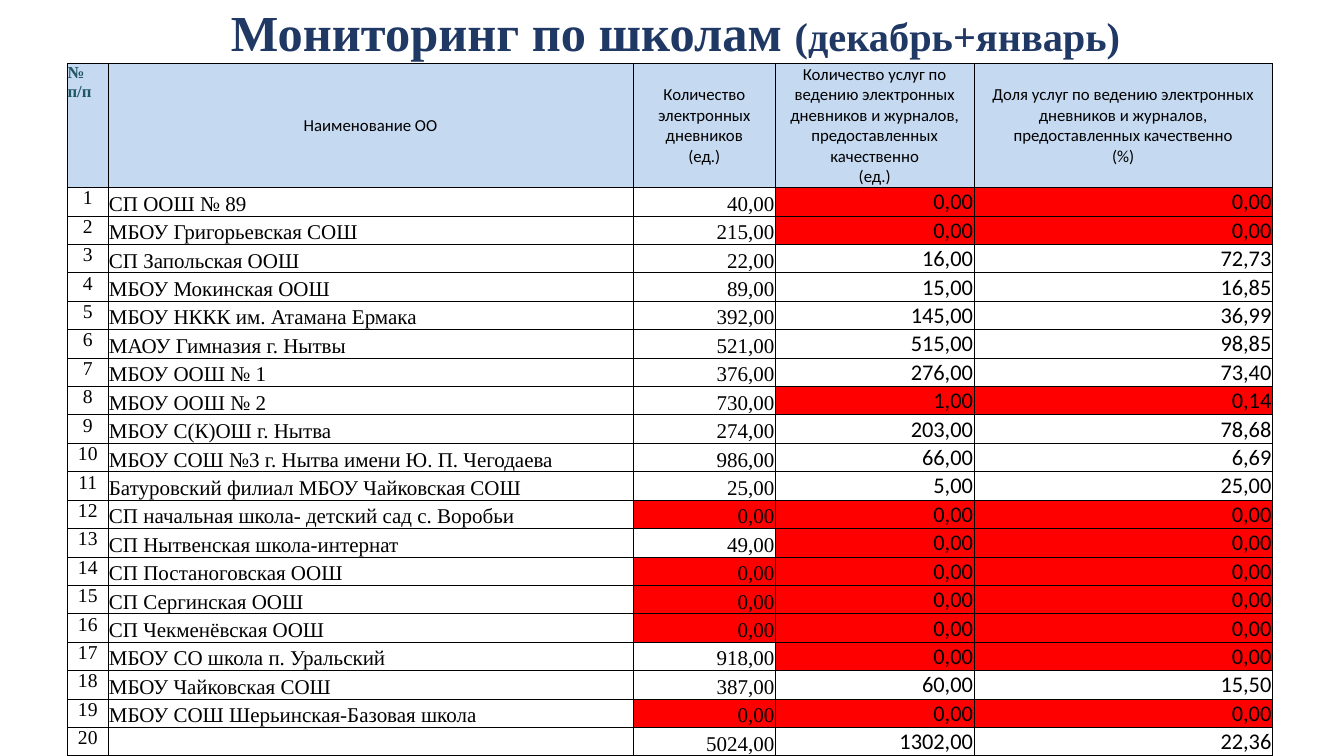
from copy import deepcopy
from dataclasses import dataclass

from lxml import etree
from pptx import Presentation
from pptx.dml.color import RGBColor
from pptx.enum.text import MSO_ANCHOR, MSO_AUTO_SIZE, PP_ALIGN
from pptx.oxml.ns import qn
from pptx.util import Inches, Pt

LEFT, MID, RIGHT = PP_ALIGN.LEFT, PP_ALIGN.CENTER, PP_ALIGN.RIGHT
TOP, CENTER, BASE = MSO_ANCHOR.TOP, MSO_ANCHOR.MIDDLE, MSO_ANCHOR.BOTTOM
FIXED = MSO_AUTO_SIZE.NONE
TITLE_ONLY = 5


@dataclass(frozen=True)
class Theme:
    serif: str = "Times New Roman"
    sans: str = "Calibri"
    navy: str = "203864"
    teal: str = "215867"
    black: str = "000000"
    sky: str = "C5D9F1"
    red: str = "FF0000"
    big: float = 36
    sub: float = 28.8
    head: float = 12
    index: float = 14
    body: float = 15
    share: float = 16
    rule: float = 0.5
    inset: float = 0.01


def apply(target, values):
    for name, value in values.items():
        setattr(target, name, value)


class Board:
    def __init__(self, deck, theme):
        self.deck = deck
        self.theme = theme
        self.slide = deck.slides.add_slide(deck.slide_layouts[TITLE_ONLY])

    def box(self, x, y, w, h):
        wide, high = self.deck.slide_width, self.deck.slide_height
        sides = (x * wide, y * high, w * wide, h * high)
        return [round(side / 100) for side in sides]

    def style(self, run, face, size, color, bold=False):
        apply(run.font, {"name": face, "size": Pt(size), "bold": bold})
        run.font.color.rgb = RGBColor.from_string(color)

    def title(self, area, parts):
        shape = self.slide.shapes.title
        apply(shape, dict(zip(("left", "top", "width", "height"), self.box(*area))))
        frame = shape.text_frame
        apply(frame, {"vertical_anchor": CENTER, "word_wrap": True, "auto_size": FIXED})
        line = frame.paragraphs[0]
        apply(line, {"alignment": MID, "line_spacing": 0.9})
        for text, size in parts:
            run = line.add_run()
            run.text = text
            self.style(run, self.theme.serif, size, self.theme.navy, True)

    def border(self, cell):
        props = cell._tc.get_or_add_tcPr()
        for side in ("lnL", "lnR", "lnT", "lnB"):
            edge = etree.SubElement(props, qn(f"a:{side}"), w=str(Pt(self.theme.rule)))
            fill = etree.SubElement(edge, qn("a:solidFill"))
            etree.SubElement(fill, qn("a:srgbClr"), val=self.theme.black)

    def cell(self, cell, text, font, align, anchor, fill=None, inset=0):
        pad = Inches(inset)
        apply(cell, {"margin_left": pad, "margin_right": pad, "margin_top": pad,
                     "margin_bottom": 0, "vertical_anchor": anchor})
        self.border(cell)
        if fill:
            cell.fill.solid()
            cell.fill.fore_color.rgb = RGBColor.from_string(fill)
        else:
            cell.fill.background()
        line = cell.text_frame.paragraphs[0]
        line.text = text
        line.alignment = align
        for run in line.runs:
            self.style(run, *font)
        for gap in line._p.findall(qn("a:br")):
            gap.append(deepcopy(line.runs[0]._r.rPr))
        if not text:
            etree.SubElement(line._p, qn("a:endParaRPr"), sz=str(round(font[1] * 100)))

    def table(self, area, widths, head, rows, top):
        box = self.box(*area)
        grid = self.slide.shapes.add_table(len(rows) + 1, len(head), *box).table
        apply(grid, {"first_row": False, "horz_banding": False})
        for column, share in zip(grid.columns, widths):
            column.width = round(box[2] * share / 100)
        first = round(box[3] * top / 100)
        step = round((box[3] - first) / len(rows))
        for spot, row in enumerate(grid.rows):
            row.height = step if spot else first

        t = self.theme
        label = (t.sans, t.head, t.black)
        corner = (t.serif, t.head, t.teal, True)
        self.cell(grid.cell(0, 0), head[0], corner, LEFT, TOP, t.sky)
        for col, text in enumerate(head[1:], 1):
            self.cell(grid.cell(0, col), text, label, MID, CENTER, t.sky, t.inset)

        plain = (t.serif, t.body, t.black)
        score = (t.sans, t.share, t.black)
        for spot, (name, *values) in enumerate(rows, 1):
            number = (t.serif, t.index, t.black)
            self.cell(grid.cell(spot, 0), str(spot), number, MID, TOP)
            self.cell(grid.cell(spot, 1), name, plain, LEFT, BASE, inset=t.inset)
            for col, (value, font) in enumerate(zip(values, (plain, score, score)), 2):
                text = f"{value:.2f}".replace(".", ",")
                fill = t.red if value <= 1 else None
                self.cell(grid.cell(spot, col), text, font, RIGHT, BASE, fill, t.inset)


HEAD = (
    "№ п/п",
    "Наименование ОО",
    "Количество электронных дневников\n(ед.)",
    "Количество услуг по ведению электронных дневников и журналов, "
    "предоставленных качественно\n(ед.)",
    "Доля услуг по ведению электронных дневников и журналов, "
    "предоставленных качественно\n(%)",
)
ROWS = (
    ("СП ООШ № 89", 40, 0, 0),
    ("МБОУ Григорьевская СОШ", 215, 0, 0),
    ("СП Запольская ООШ", 22, 16, 72.73),
    ("МБОУ Мокинская ООШ", 89, 15, 16.85),
    ("МБОУ НККК им. Атамана Ермака", 392, 145, 36.99),
    ("МАОУ Гимназия г. Нытвы", 521, 515, 98.85),
    ("МБОУ ООШ № 1", 376, 276, 73.4),
    ("МБОУ ООШ № 2", 730, 1, 0.14),
    ("МБОУ С(К)ОШ г. Нытва", 274, 203, 78.68),
    ("МБОУ СОШ №3 г. Нытва имени Ю. П. Чегодаева", 986, 66, 6.69),
    ("Батуровский филиал МБОУ Чайковская СОШ", 25, 5, 25),
    ("СП начальная школа- детский сад с. Воробьи", 0, 0, 0),
    ("СП Нытвенская школа-интернат", 49, 0, 0),
    ("СП Постаноговская ООШ", 0, 0, 0),
    ("СП Сергинская ООШ", 0, 0, 0),
    ("СП Чекменёвская ООШ", 0, 0, 0),
    ("МБОУ СО школа п. Уральский", 918, 0, 0),
    ("МБОУ Чайковская СОШ", 387, 60, 15.5),
    ("МБОУ СОШ Шерьинская-Базовая школа", 0, 0, 0),
    ("", 5024, 1302, 22.36),
)


def main():
    deck = Presentation()
    apply(deck, {"slide_width": Inches(13.33), "slide_height": Inches(7.5)})
    theme = Theme()
    board = Board(deck, theme)
    board.title((7.13, 0, 86.27, 9.33),
                (("Мониторинг по школам ", theme.big), ("(декабрь+январь)", theme.sub)))
    board.table((5.03, 8.4, 89.65, 91.6), (3.35, 43.6, 11.8, 16.48, 24.77),
                HEAD, ROWS, 17.9)
    deck.save("out.pptx")


if __name__ == "__main__":
    main()
